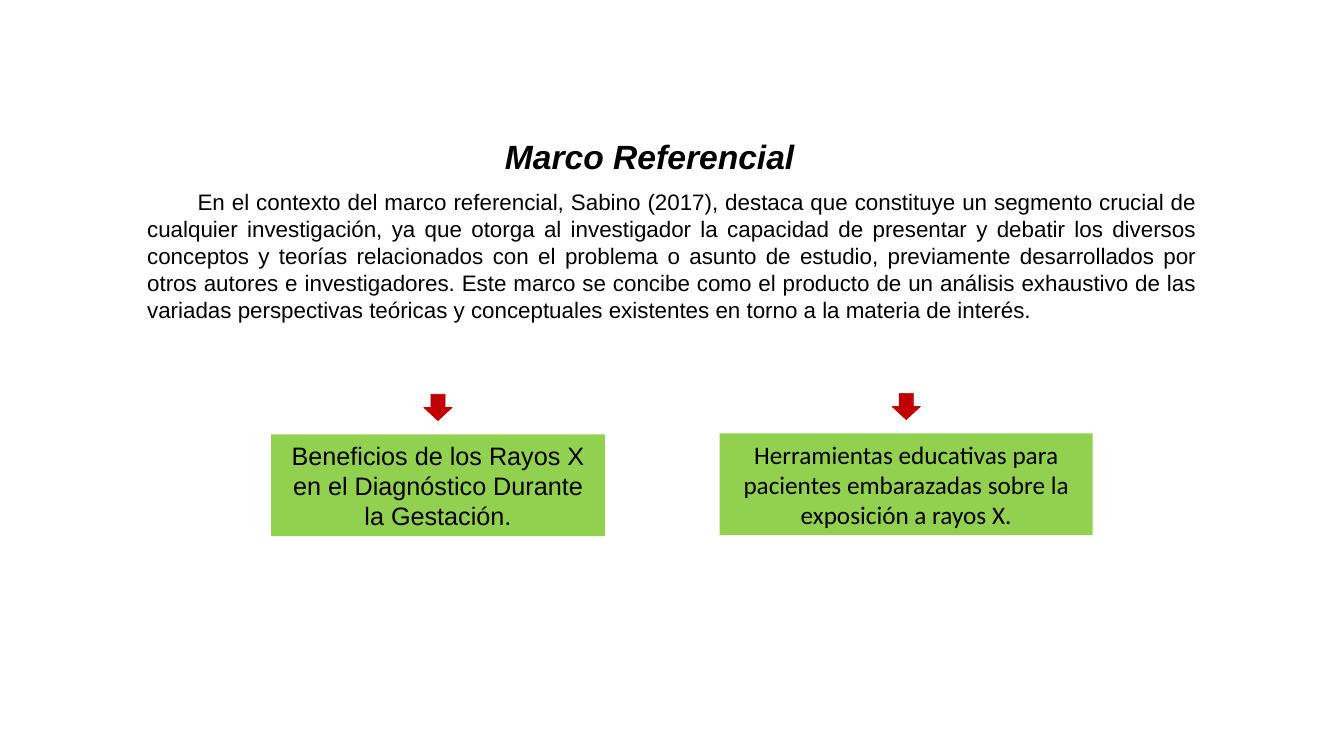
from pptx import Presentation
from pptx.dml.color import RGBColor
from pptx.enum.shapes import MSO_SHAPE as Kind
from pptx.enum.text import MSO_ANCHOR as Anchor, MSO_AUTO_SIZE as Fit, PP_ALIGN as Align
from pptx.oxml.ns import qn
from pptx.util import Pt
from lxml.etree import SubElement

HEAD = "Marco Referencial"
TEXT = (
    "En el contexto del marco referencial, Sabino (2017), destaca que constituye "
    "un segmento crucial de cualquier investigación, ya que otorga al investigador "
    "la capacidad de presentar y debatir los diversos conceptos y teorías "
    "relacionados con el problema o asunto de estudio, previamente desarrollados "
    "por otros autores e investigadores. Este marco se concibe como el producto de "
    "un análisis exhaustivo de las variadas perspectivas teóricas y conceptuales "
    "existentes en torno a la materia de interés."
)
TOPICS = [
    ("Beneficios de los Rayos X en el Diagnóstico Durante la Gestación.",
     "Arial", 193.7, 310.3, 238.3),
    ("Herramientas educativas para pacientes embarazadas sobre la exposición a rayos X.",
     "Calibri", 514.1, 309.6, 266.4),
]
BLACK, RED, GREEN = "000000", "C00000", "92D050"
BOX_H = 72.7
TIP_W, TIP_H, RISE = 20.2, 18.7, 28.6


def color(code):
    return RGBColor.from_string(code)


def place(shape, x, y, w, h):
    shape.left, shape.top, shape.width, shape.height = Pt(x), Pt(y), Pt(w), Pt(h)


def write(shape, text, size, face, align, anchor, bold=False, slant=False):
    frame = shape.text_frame
    frame.word_wrap = True
    frame.auto_size = Fit.NONE
    frame.vertical_anchor = anchor
    para = frame.paragraphs[0]
    para.alignment = align
    run = para.add_run()
    run.text = text
    font = run.font
    font.size, font.name, font.bold, font.italic = Pt(size), face, bold, slant
    font.color.rgb = color(BLACK)
    return para


def draw(kind, x, y, w, h, fill):
    shape = slide.shapes.add_shape(kind, Pt(x), Pt(y), Pt(w), Pt(h))
    shape.shadow.inherit = False
    shape.fill.solid()
    shape.fill.fore_color.rgb = color(fill)
    return shape


deck = Presentation()
deck.slide_width, deck.slide_height = Pt(960), Pt(540)
slide = deck.slides.add_slide(deck.slide_layouts[1])

title = slide.shapes.title
place(title, 352.8, 88.6, 222.5, 45.4)
write(title, HEAD, 24, "Arial", Align.CENTER, Anchor.MIDDLE, True, True)

body = slide.placeholders[1]
place(body, 97.9, 131, 763.9, 104.4)
para = write(body, TEXT, 16, "Arial", Align.JUSTIFY, Anchor.TOP)
para.space_before = Pt(0)
props = para._p.get_or_add_pPr()
props.set("marL", "0")
props.set("indent", str(Pt(36)))
SubElement(props, qn("a:buNone"))

for text, face, x, y, w in TOPICS:
    tip = draw(Kind.DOWN_ARROW, x + (w - TIP_W) / 2, y - RISE, TIP_W, TIP_H, RED)
    tip.line.color.rgb = color(RED)
    tip.line.width = Pt(0.5)
    box = draw(Kind.RECTANGLE, x, y, w, BOX_H, GREEN)
    box.line.fill.background()
    write(box, text, 18, face, Align.CENTER, Anchor.MIDDLE)

deck.save("out.pptx")
